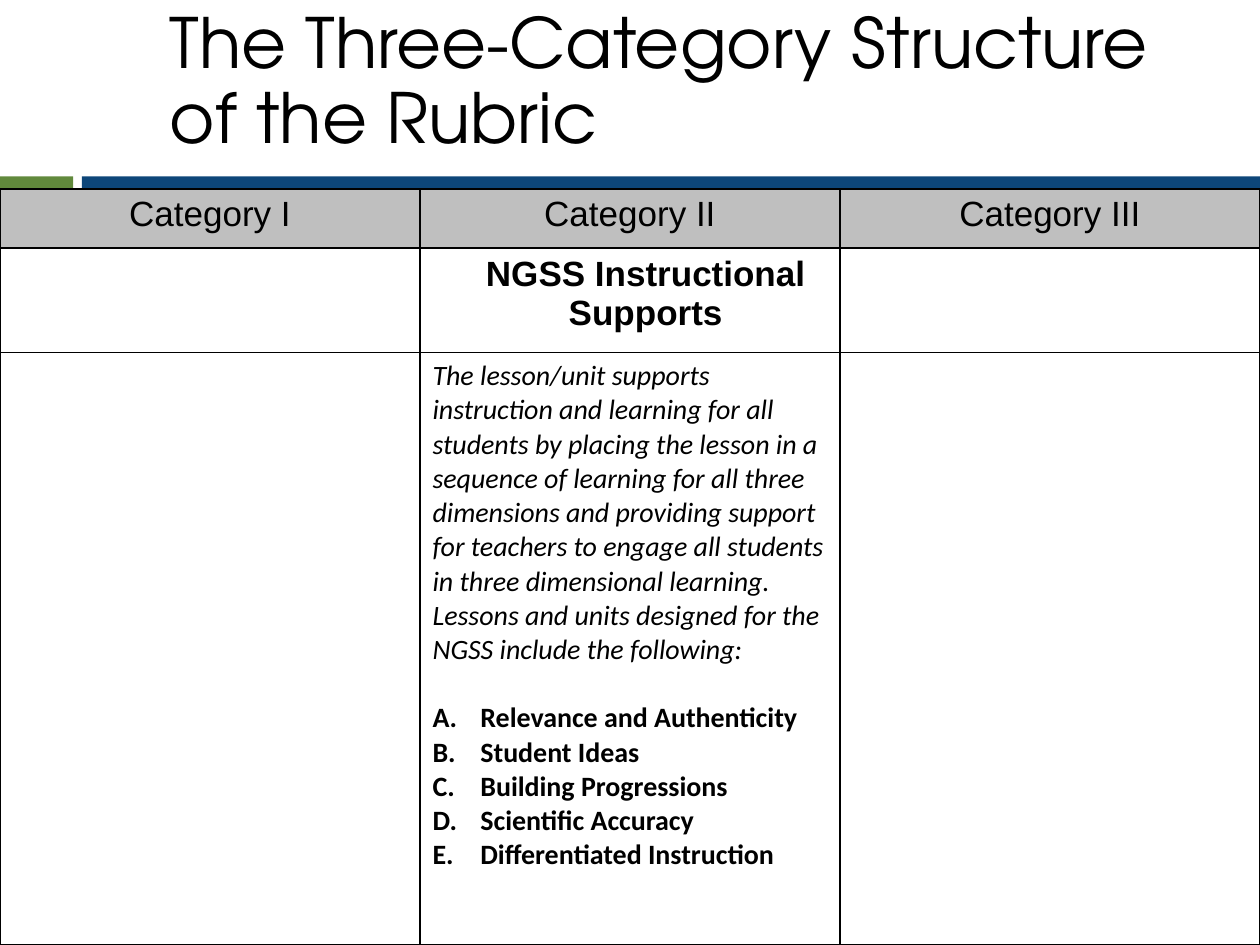
from lxml import etree
from pptx import Presentation
from pptx.dml.color import RGBColor
from pptx.enum import shapes, text
from pptx.oxml import ns
from pptx.util import Inches, Pt

BLACK = RGBColor(0x00, 0x00, 0x00)
WHITE = RGBColor(0xFF, 0xFF, 0xFF)
HEADER_GRAY = RGBColor(0xBF, 0xBF, 0xBF)
GREEN = RGBColor(0x61, 0x89, 0x3C)
BLUE = RGBColor(0x0D, 0x46, 0x79)

TITLE_FONT = {"name": "TeX Gyre Adventor", "size": Pt(39.6)}
HEADER_FONT = {"name": "Arial", "size": Pt(20)}
SUBHEAD_FONT = {**HEADER_FONT, "bold": True}
INTRO_FONT = {"name": "Calibri", "size": Pt(16), "italic": True}
CRITERION_FONT = {"name": "Calibri", "size": Pt(16), "bold": True}

CATEGORIES = ["Category I", "Category II", "Category III"]
ROW_HEIGHTS = [0.47, 0.83, 4.7]
INTRO = (
    "The lesson/unit supports instruction and learning for all students by "
    "placing the lesson in a sequence of learning for all three dimensions "
    "and providing support for teachers to engage all students in three "
    "dimensional learning. Lessons and units designed for the NGSS include "
    "the following:"
)
CRITERIA = [
    "Relevance and Authenticity",
    "Student Ideas",
    "Building Progressions",
    "Scientific Accuracy",
    "Differentiated Instruction",
]


def add_child(parent, tag, **attributes):
    return etree.SubElement(parent, ns.qn(tag), attributes)


def add_color(parent, color):
    add_child(parent, "a:srgbClr", val=str(color))


def write(paragraph, wording, font_format, align=None):
    paragraph.alignment = align
    run = paragraph.add_run()
    run.text = wording
    for attribute, value in font_format.items():
        setattr(run.font, attribute, value)
    run.font.color.rgb = BLACK


def indent(paragraph, left, first=0):
    properties = paragraph._p.get_or_add_pPr()
    properties.set("marL", str(Inches(left)))
    properties.set("indent", str(Inches(first)))
    return properties


def letter(paragraph):
    properties = indent(paragraph, 0.38, -0.38)
    add_color(add_child(properties, "a:buClr"), BLACK)
    add_child(properties, "a:buAutoNum", type="alphaUcPeriod")


def add_bar(slide, left, width, color):
    bar = slide.shapes.add_shape(
        shapes.MSO_SHAPE.RECTANGLE,
        Inches(left), Inches(1.4), Inches(width), Inches(0.25),
    )
    bar.shadow.inherit = False
    bar.fill.solid()
    bar.fill.fore_color.rgb = color
    bar.line.fill.background()


def add_title(slide, wording):
    title = slide.shapes.add_textbox(
        Inches(1.25), Inches(0.12), Inches(8.42), Inches(1.08)
    )
    frame = title.text_frame
    frame.word_wrap = True
    frame.vertical_anchor = text.MSO_ANCHOR.MIDDLE
    frame.paragraphs[0].line_spacing = 0.9
    write(frame.paragraphs[0], wording, TITLE_FONT)


def style_cell(cell, color):
    properties = cell._tc.get_or_add_tcPr()
    for side in ("a:lnL", "a:lnR", "a:lnT", "a:lnB"):
        border = add_child(properties, side, w=str(Pt(1)))
        add_color(add_child(border, "a:solidFill"), BLACK)
    cell.fill.solid()
    cell.fill.fore_color.rgb = color


def fill_criteria(cell):
    frame = cell.text_frame
    write(frame.paragraphs[0], INTRO, INTRO_FONT)
    for index, criterion in enumerate(CRITERIA):
        paragraph = frame.add_paragraph()
        letter(paragraph)
        if index == 0:
            paragraph.space_before = Pt(19.5)
        write(paragraph, criterion, CRITERION_FONT)


def add_rubric(slide):
    rubric = slide.shapes.add_table(
        len(ROW_HEIGHTS), len(CATEGORIES),
        Inches(0), Inches(1.5), Inches(10), Inches(sum(ROW_HEIGHTS)),
    ).table
    rubric.first_row = rubric.horz_banding = False
    for row_index, (row, height) in enumerate(zip(rubric.rows, ROW_HEIGHTS)):
        row.height = Inches(height)
        for cell in row.cells:
            style_cell(cell, WHITE if row_index else HEADER_GRAY)

    center = text.PP_ALIGN.CENTER
    for column, category in enumerate(CATEGORIES):
        heading = rubric.cell(0, column).text_frame.paragraphs[0]
        write(heading, category, HEADER_FONT, center)

    subhead = rubric.cell(1, 1).text_frame.paragraphs[0]
    indent(subhead, 0.25)
    write(subhead, "NGSS Instructional Supports", SUBHEAD_FONT, center)
    fill_criteria(rubric.cell(2, 1))


def main():
    deck = Presentation()
    deck.slide_width, deck.slide_height = Inches(10), Inches(7.5)
    slide = deck.slides.add_slide(deck.slide_layouts[6])
    add_bar(slide, 0, 0.58, GREEN)
    add_bar(slide, 0.65, 9.35, BLUE)
    add_rubric(slide)
    add_title(slide, "The Three-Category Structure of the Rubric")
    deck.save("out.pptx")


if __name__ == "__main__":
    main()
